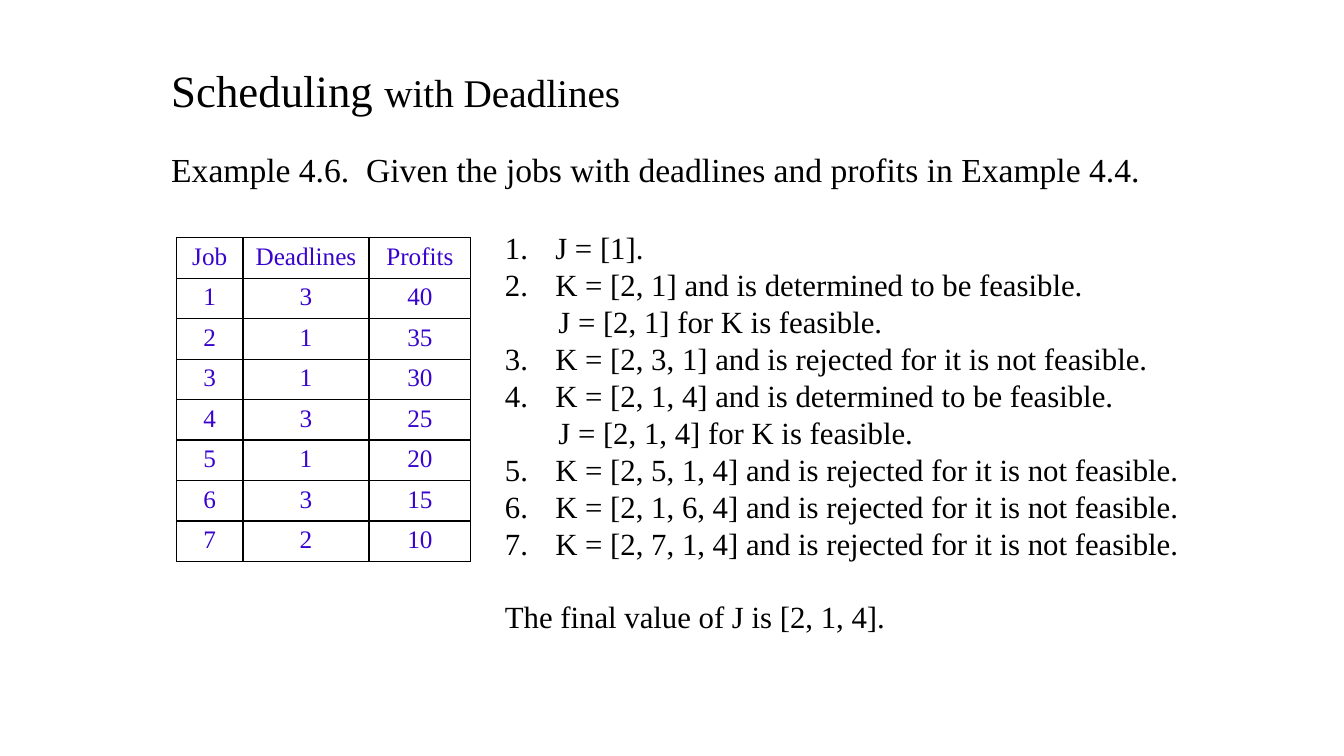
from dataclasses import dataclass

from lxml.etree import SubElement
from pptx import Presentation
from pptx.dml.color import RGBColor as Rgb
from pptx.enum.text import MSO_AUTO_SIZE as AutoSize, PP_ALIGN as Align
from pptx.oxml.ns import qn
from pptx.util import Pt

PX = 9144


@dataclass(frozen=True)
class Theme:
    font: str = "Times New Roman"
    ink: Rgb = Rgb(0x00, 0x00, 0x00)
    paper: Rgb = Rgb(0xFF, 0xFF, 0xFF)
    job_ink: Rgb = Rgb(0x38, 0x03, 0xCD)
    title: int = 32
    subtitle: int = 28
    example: int = 24
    step: int = 22
    job: int = 18
    rule: int = 1
    leading: float = 1.2


THEME = Theme()

JOBS = [
    ("Job", "Deadlines", "Profits"),
    (1, 3, 40),
    (2, 1, 35),
    (3, 1, 30),
    (4, 3, 25),
    (5, 1, 20),
    (6, 3, 15),
    (7, 2, 10),
]
JOB_COLUMNS = (66, 125, 101)

STEPS = [
    (1, "J = [1]."),
    (1, "K = [2, 1] and is determined to be feasible."),
    (None, "J = [2, 1] for K is feasible."),
    (3, "K = [2, 3, 1] and is rejected for it is not feasible."),
    (3, "K = [2, 1, 4] and is determined to be feasible."),
    (None, "J = [2, 1, 4] for K is feasible."),
    (5, "K = [2, 5, 1, 4] and is rejected for it is not feasible."),
    (5, "K = [2, 1, 6, 4] and is rejected for it is not feasible."),
    (5, "K = [2, 7, 1, 4] and is rejected for it is not feasible."),
]


def px(*lengths):
    return [length * PX for length in lengths]


def write(paragraph, text, *, size, color=THEME.ink, align=Align.LEFT, leading=None):
    paragraph.alignment = align
    if leading:
        paragraph.line_spacing = Pt(size * leading)
    run = paragraph.add_run()
    run.text = text
    run.font.name = THEME.font
    run.font.size = Pt(size)
    run.font.color.rgb = color


def add_frame(slide, box):
    frame = slide.shapes.add_textbox(*px(*box)).text_frame
    frame.word_wrap = True
    frame.auto_size = AutoSize.SHAPE_TO_FIT_TEXT
    return frame


def indent(paragraph, margin, first_line=0):
    properties = paragraph._p.get_or_add_pPr()
    properties.set("marL", str(margin * PX))
    properties.set("indent", str(first_line * PX))
    return properties


def number(paragraph, start):
    properties = indent(paragraph, 50, -50)
    SubElement(properties, qn("a:buFont"), typeface="+mj-lt")
    numbering = SubElement(properties, qn("a:buAutoNum"), type="arabicPeriod")
    if start > 1:
        numbering.set("startAt", str(start))


def rule_cell(cell):
    properties = cell._tc.get_or_add_tcPr()
    for position, side in enumerate(("lnL", "lnR", "lnT", "lnB")):
        border = SubElement(properties, qn(f"a:{side}"), w=str(Pt(THEME.rule)))
        properties.insert(position, border)
        fill = SubElement(border, qn("a:solidFill"))
        SubElement(fill, qn("a:srgbClr"), val=str(THEME.ink))


def add_title(slide, box):
    heading = add_frame(slide, box).paragraphs[0]
    write(heading, "Scheduling ", size=THEME.title)
    write(heading, "with Deadlines", size=THEME.subtitle)
    heading.line_spacing = Pt(THEME.title * THEME.leading)


def add_example(slide, box):
    write(
        add_frame(slide, box).paragraphs[0],
        "Example 4.6.  Given the jobs with deadlines and profits in Example 4.4.",
        size=THEME.example,
        leading=THEME.leading,
    )


def add_jobs(slide, box):
    jobs = slide.shapes.add_table(len(JOBS), len(JOB_COLUMNS), *px(*box)).table
    jobs.first_row = jobs.horz_banding = False
    for column, width in zip(jobs.columns, JOB_COLUMNS):
        column.width = width * PX
    for row, values in zip(jobs.rows, JOBS):
        row.height = box[3] * PX // len(JOBS)
        for cell, value in zip(row.cells, values):
            cell.fill.solid()
            cell.fill.fore_color.rgb = THEME.paper
            rule_cell(cell)
            write(
                cell.text_frame.paragraphs[0],
                str(value),
                size=THEME.job,
                color=THEME.job_ink,
                align=Align.CENTER,
            )


def add_steps(slide, box):
    frame = add_frame(slide, box)
    step = frame.paragraphs[0]
    for start, text in STEPS:
        write(step, text, size=THEME.step, leading=THEME.leading)
        if start:
            number(step, start)
        else:
            indent(step, 53)
        step = frame.add_paragraph()
    step.space_before = Pt(THEME.step * THEME.leading)
    write(
        step,
        "The final value of J is [2, 1, 4].",
        size=THEME.step,
        leading=THEME.leading,
    )


def main():
    deck = Presentation()
    deck.slide_width, deck.slide_height = px(1333, 750)
    slide = deck.slides.add_slide(deck.slide_layouts[6])
    slide.background.fill.solid()
    slide.background.fill.fore_color.rgb = THEME.paper
    add_example(slide, (160, 143, 987, 50))
    add_title(slide, (160, 57, 612, 64))
    add_jobs(slide, (175, 236, 292, 321))
    add_steps(slide, (491, 222, 693, 417))
    deck.save("out.pptx")


if __name__ == "__main__":
    main()
